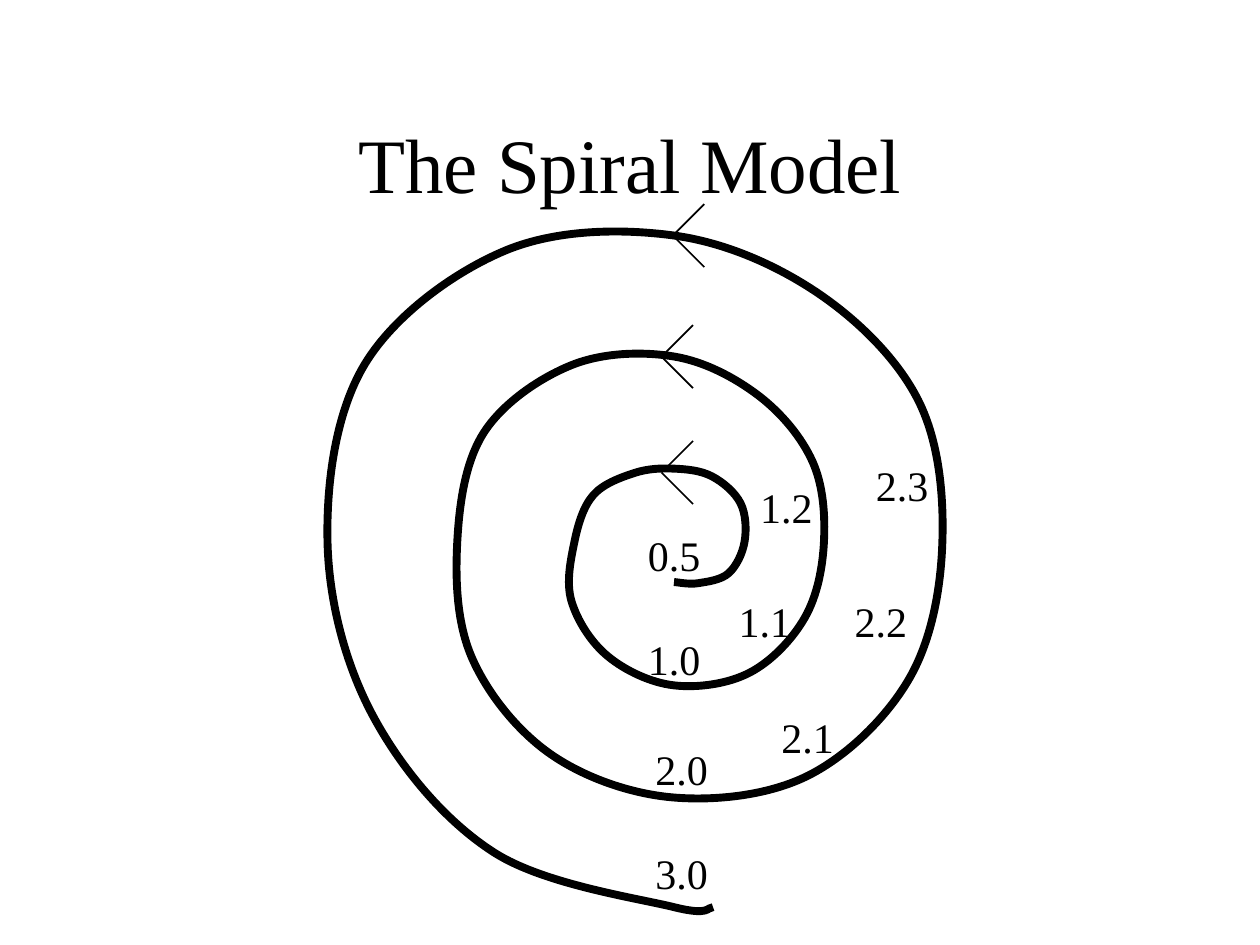
from dataclasses import dataclass
from math import cos, radians, sin
from lxml.etree import SubElement
from pptx import Presentation
from pptx.dml.color import RGBColor
from pptx.enum.shapes import MSO_CONNECTOR as Connector
from pptx.enum.text import MSO_ANCHOR as Anchor, MSO_AUTO_SIZE as AutoSize, PP_ALIGN as Align
from pptx.oxml.ns import qn
from pptx.util import Inches, Pt


@dataclass(frozen=True)
class Theme:
    ink: RGBColor = RGBColor(0, 0, 0)
    paper: RGBColor = RGBColor(255, 255, 255)
    font: str = "Times New Roman"
    title_size: float = 44
    label_size: float = 24
    spiral_width: float = 4.5
    arrow_width: float = 1


THEME = Theme()
TITLE = "The Spiral Model"
TITLE_FRAME = (0.75, 0.67, 8.5, 1.25)
LABEL_SIZE = (0.62, 0.5)
VERSIONS = [
    ("1.0", 5.04, 4.98), ("0.5", 5.04, 4.15), ("2.0", 5.10, 5.85),
    ("3.0", 5.10, 6.68), ("1.1", 5.76, 4.68), ("1.2", 5.93, 3.77),
    ("2.1", 6.10, 5.60), ("2.2", 6.68, 4.68), ("2.3", 6.85, 3.60),
]
ARROW_TIPS = [(5.34, 1.87), (5.25, 2.83), (5.25, 3.75)]
ARROW_REACH = 0.25
SPIRAL_CENTER = (5.35, 4.3)
SPIRAL_END = (5.66, 7.2)
TURN_RADII = [
    (0.32, 0.38, 0.5, 0.56, 0.61, 0.6, 0.58, 0.63, 0.74, 0.79, 0.94, 1.05),
    (1.14, 1.2, 1.2, 1.19, 1.27, 1.34, 1.47, 1.62, 1.74, 1.72, 1.85, 1.95),
    (2.03, 2.14, 2.16, 2.13, 2.24, 2.28, 2.43, 2.67, 2.83, 2.75, 2.76, 2.85),
]
LAST_RADIUS = 2.9


def inches(values):
    return [Inches(value) for value in values]


def write(frame, text, size):
    frame.text = text
    para = frame.paragraphs[0]
    para.alignment = Align.CENTER
    font = para.runs[0].font
    font.name, font.size = THEME.font, Pt(size)
    font.color.rgb = THEME.ink


def style_line(line, width):
    line.color.rgb = THEME.ink
    line.width = Pt(width)


def add_title(page):
    title = page.shapes.title
    title.left, title.top, title.width, title.height = inches(TITLE_FRAME)
    title.text_frame.auto_size = AutoSize.NONE
    title.text_frame.vertical_anchor = Anchor.MIDDLE
    write(title.text_frame, TITLE, THEME.title_size)


def spiral_anchors():
    x, y = SPIRAL_CENTER
    radii = [radius for turn in TURN_RADII for radius in turn] + [LAST_RADIUS]
    step = radians(360 / len(TURN_RADII[0]))
    anchors = [(x + radius * sin(i * step), y + radius * cos(i * step))
               for i, radius in enumerate(radii)]
    return anchors + [SPIRAL_END]


def smooth_points(anchors):
    padded = [anchors[0], *anchors, anchors[-1]]
    points = []
    for before, start, end, after in zip(padded, padded[1:], padded[2:], padded[3:]):
        leave = [s + (e - b) / 6 for b, s, e in zip(before, start, end)]
        arrive = [e - (a - s) / 6 for s, e, a in zip(start, end, after)]
        points += [leave, arrive, end]
    return points


def add_spiral(page):
    anchors = spiral_anchors()
    builder = page.shapes.build_freeform(*inches(anchors[0]))
    points = [inches(point) for point in smooth_points(anchors)]
    builder.add_line_segments(points, close=False)
    spiral = builder.convert_to_shape()
    spiral.shadow.inherit = False
    spiral.fill.background()
    style_line(spiral.line, THEME.spiral_width)
    segments = list(spiral.element.iter(qn("a:lnTo")))
    outline = segments[0].getparent()
    for first in range(0, len(segments), 3):
        curve = SubElement(outline, qn("a:cubicBezTo"))
        for segment in segments[first:first + 3]:
            curve.append(segment[0])
            outline.remove(segment)


def add_version(page, text, left, top):
    box = page.shapes.add_textbox(*inches((left, top, *LABEL_SIZE)))
    box.text_frame.word_wrap = False
    box.text_frame.auto_size = AutoSize.SHAPE_TO_FIT_TEXT
    write(box.text_frame, text, THEME.label_size)


def add_arrow(page, x, y):
    for reach in (ARROW_REACH, -ARROW_REACH):
        ends = inches((x, y, x + ARROW_REACH, y + reach))
        barb = page.shapes.add_connector(Connector.STRAIGHT, *ends)
        style_line(barb.line, THEME.arrow_width)
        SubElement(barb.element.spPr, qn("a:effectLst"))


def main():
    deck = Presentation()
    deck.slide_width, deck.slide_height = inches((10, 7.5))
    page = deck.slides.add_slide(deck.slide_layouts.get_by_name("Title Only"))
    page.background.fill.solid()
    page.background.fill.fore_color.rgb = THEME.paper
    add_title(page)
    add_spiral(page)
    for version in VERSIONS:
        add_version(page, *version)
    for tip in ARROW_TIPS:
        add_arrow(page, *tip)
    deck.save("out.pptx")


if __name__ == "__main__":
    main()
